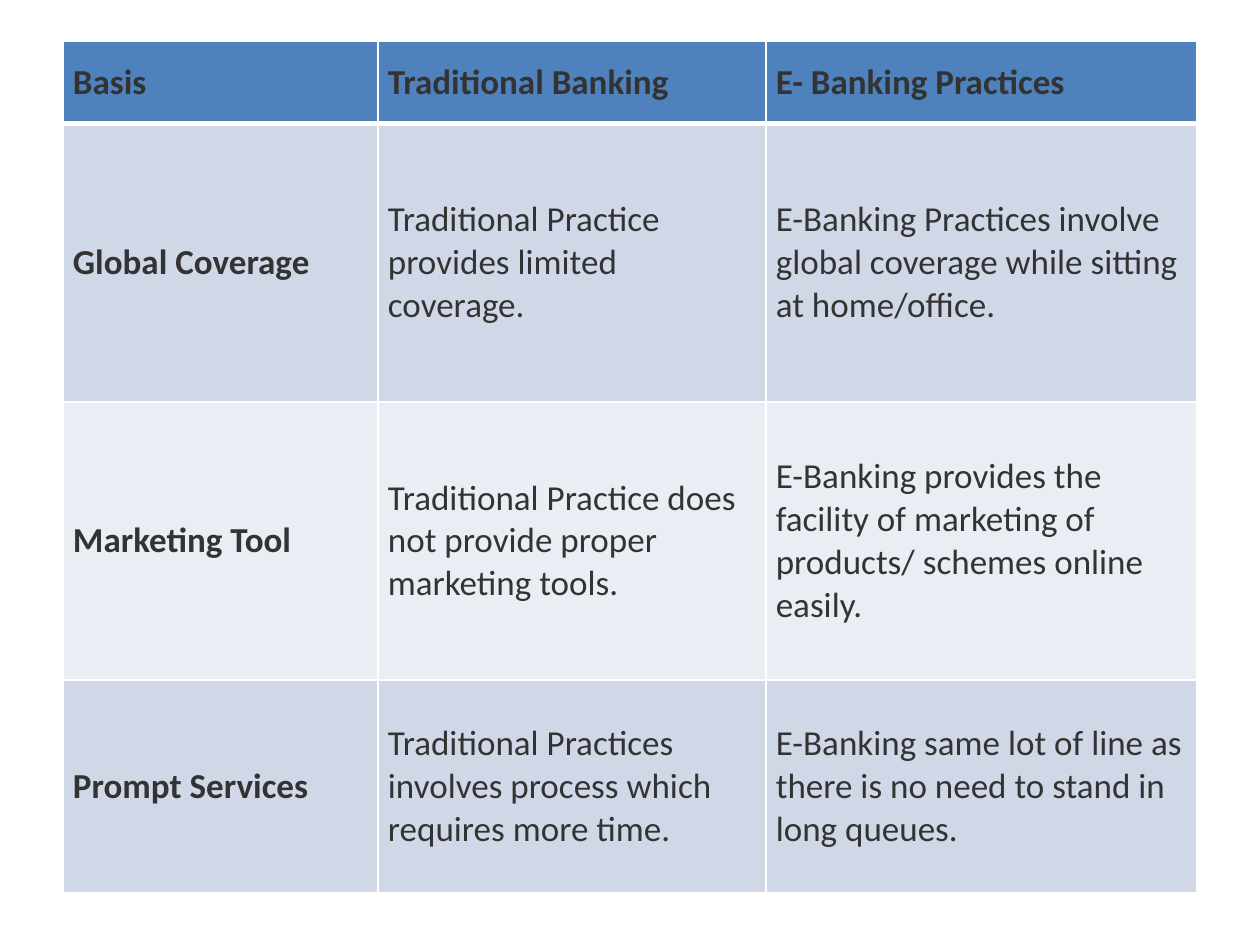
from lxml import etree
from pptx import Presentation
from pptx.dml.color import RGBColor
from pptx.enum.text import MSO_ANCHOR
from pptx.oxml.ns import qn
from pptx.util import Cm, Pt

MIDDLE = MSO_ANCHOR.MIDDLE
BLANK_LAYOUT = 6

COLUMN_WIDTHS = [6.35, 7.82, 8.69]
ROW_HEIGHTS = [1.65, 5.61, 5.61, 4.29]
COMPARISON = [
    ["Basis", "Traditional Banking", "E- Banking Practices"],
    [
        "Global Coverage",
        "Traditional Practice provides limited coverage.",
        "E-Banking Practices involve global coverage while sitting at home/office.",
    ],
    [
        "Marketing Tool",
        "Traditional Practice does not provide proper marketing tools.",
        "E-Banking provides the facility of marketing of products/ schemes online easily.",
    ],
    [
        "Prompt Services",
        "Traditional Practices involves process which requires more time.",
        "E-Banking same lot of line as there is no need to stand in long queues.",
    ],
]


def color(value):
    return RGBColor.from_string(value)


def write_text(frame, text, *, font, size, ink, bold=False):
    span = frame.paragraphs[0].add_run()
    span.text = text
    span.font.name = font
    span.font.size = Pt(size)
    span.font.bold = bold
    span.font.color.rgb = color(ink)


class SlideBuilder:
    font = "Calibri"
    size = 20
    ink = "333333"
    header_fill = "4F81BD"
    band_fills = ["D0D8E8", "E9EDF4"]
    border = "FFFFFF"

    def __init__(self, page):
        self.page = page

    def add_borders(self, cell, widths):
        properties = cell._tc.get_or_add_tcPr()
        for position, (side, width) in enumerate(widths.items()):
            line = etree.Element(qn(f"a:ln{side}"), w=str(Pt(width)))
            fill = etree.SubElement(line, qn("a:solidFill"))
            etree.SubElement(fill, qn("a:srgbClr"), val=self.border)
            properties.insert(position, line)

    def add_cell(self, cell, text, row, column):
        header = row == 0
        cell.margin_left = cell.margin_right = Cm(0.2)
        cell.margin_top = cell.margin_bottom = Cm(0.1)
        cell.vertical_anchor = MIDDLE
        cell.fill.solid()
        cell.fill.fore_color.rgb = color(
            self.header_fill if header else self.band_fills[(row - 1) % 2]
        )
        self.add_borders(
            cell,
            {"L": 1, "R": 1, "T": 3 if row == 1 else 1, "B": 3 if header else 1},
        )
        write_text(
            cell.text_frame,
            text,
            font=self.font,
            size=self.size,
            ink=self.ink,
            bold=header or column == 0,
        )

    def add_table(self, left, top, widths, heights, content):
        table = self.page.shapes.add_table(
            len(heights),
            len(widths),
            Cm(left),
            Cm(top),
            Cm(sum(widths)),
            Cm(sum(heights)),
        ).table
        for column, width in zip(table.columns, widths):
            column.width = Cm(width)
        for row, height in zip(table.rows, heights):
            row.height = Cm(height)
        for row, texts in enumerate(content):
            for column, text in enumerate(texts):
                self.add_cell(table.cell(row, column), text, row, column)


def main():
    deck = Presentation()
    deck.slide_width = Cm(25.4)
    deck.slide_height = Cm(19.05)
    page = deck.slides.add_slide(deck.slide_layouts[BLANK_LAYOUT])
    builder = SlideBuilder(page)
    builder.add_table(1.27, 0.84, COLUMN_WIDTHS, ROW_HEIGHTS, COMPARISON)
    deck.save("out.pptx")


if __name__ == "__main__":
    main()
